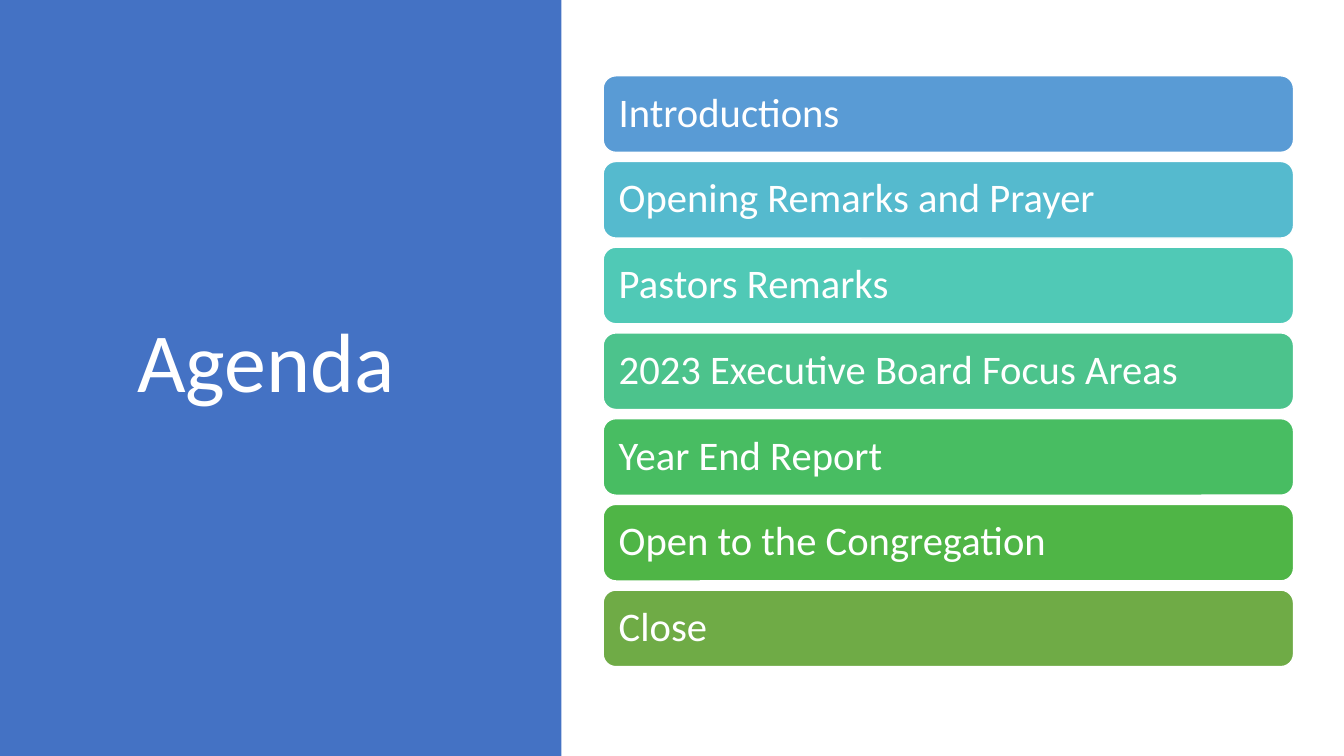
from pptx import Presentation
from pptx.dml.color import RGBColor
from pptx.enum.shapes import MSO_SHAPE
from pptx.enum.text import MSO_ANCHOR, PP_ALIGN
from pptx.util import Cm, Pt

TITLE = "Agenda"
PANEL_BLUE = RGBColor(0x44, 0x72, 0xC4)
WHITE = RGBColor(0xFF, 0xFF, 0xFF)
AGENDA = [
    ("Introductions", RGBColor(0x59, 0x9B, 0xD5)),
    ("Opening Remarks and Prayer", RGBColor(0x55, 0xBA, 0xCE)),
    ("Pastors Remarks", RGBColor(0x50, 0xC9, 0xB6)),
    ("2023 Executive Board Focus Areas", RGBColor(0x4C, 0xC3, 0x8C)),
    ("Year End Report", RGBColor(0x48, 0xBD, 0x62)),
    ("Open to the Congregation", RGBColor(0x4F, 0xB5, 0x46)),
    ("Close", RGBColor(0x6F, 0xAB, 0x46)),
]

FONT = "Calibri"
RECT, ROUNDED = MSO_SHAPE.RECTANGLE, MSO_SHAPE.ROUNDED_RECTANGLE
LEFT, CENTER = PP_ALIGN.LEFT, PP_ALIGN.CENTER
MIDDLE = MSO_ANCHOR.MIDDLE

SLIDE_W, SLIDE_H = Cm(33.87), Cm(19.05)
PANEL_W = Cm(14.15)
BAR_LEFT, BAR_TOP = Cm(15.2), Cm(1.91)
BAR_W, BAR_H, BAR_PITCH = Cm(17.4), Cm(1.93), Cm(2.16)


def add_box(shapes, kind, left, top, width, height, fill):
    sp = shapes.add_shape(kind, left, top, width, height)
    sp.shadow.inherit = False
    sp.fill.solid()
    sp.fill.fore_color.rgb = fill
    sp.line.fill.background()
    return sp


def write(sp, text, size, align=LEFT, inset_x=Cm(0.25), inset_y=Cm(0.13)):
    tf = sp.text_frame
    tf.word_wrap = True
    tf.vertical_anchor = MIDDLE
    tf.margin_left = tf.margin_right = inset_x
    tf.margin_top = tf.margin_bottom = inset_y
    p = tf.paragraphs[0]
    p.alignment = align
    p.line_spacing = 0.9
    r = p.add_run()
    r.text = text
    r.font.name = FONT
    r.font.size = Pt(size)
    r.font.color.rgb = WHITE


prs = Presentation()
prs.slide_width, prs.slide_height = SLIDE_W, SLIDE_H
s = prs.slides.add_slide(prs.slide_layouts[5])

title = s.shapes.title
title.left, title.top, title.width, title.height = Cm(1.42), Cm(1.55), Cm(10.57), Cm(15.29)
write(title, TITLE, 60, align=CENTER)

panel = add_box(s.shapes, RECT, 0, 0, PANEL_W, SLIDE_H, PANEL_BLUE)
title.element.addprevious(panel.element)  # the panel lies behind the title

bars = s.shapes.add_group_shape()
for i, (item, colour) in enumerate(AGENDA):
    bar = add_box(bars.shapes, ROUNDED, BAR_LEFT, BAR_TOP + i * BAR_PITCH, BAR_W, BAR_H, colour)
    bar.adjustments[0] = 0.167
    bar.line.color.rgb = WHITE
    bar.line.width = Pt(1)
    write(bar, item, 29, inset_x=Cm(0.3), inset_y=Cm(0.3))

prs.save("out.pptx")
